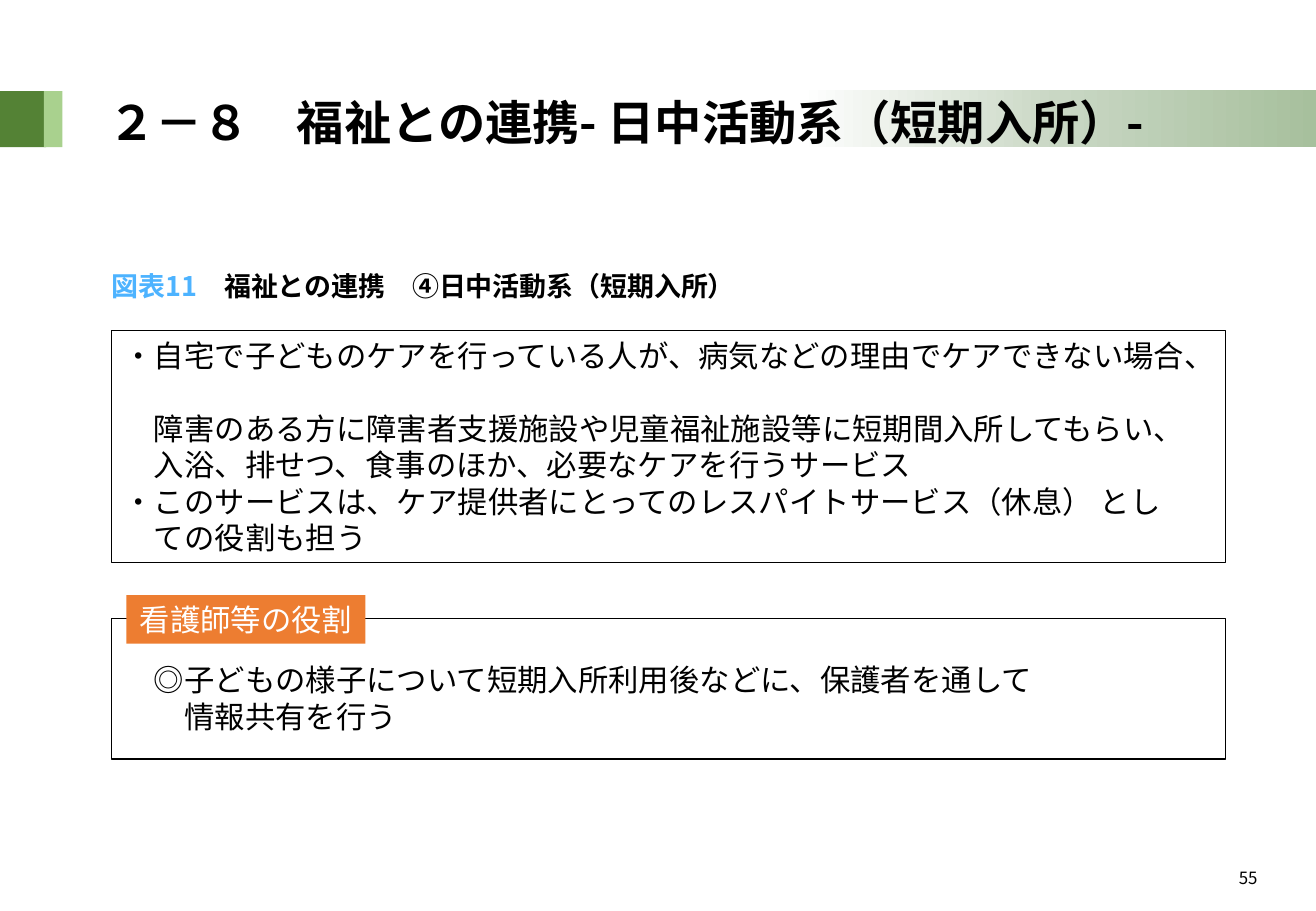
"""Build the slide on short-stay welfare services."""
from copy import deepcopy

from lxml import etree
from pptx import Presentation
from pptx.dml.color import RGBColor
from pptx.enum.shapes import MSO_SHAPE
from pptx.enum.text import MSO_ANCHOR, MSO_AUTO_SIZE, PP_ALIGN
from pptx.oxml.ns import qn
from pptx.util import Pt

RECT = MSO_SHAPE.RECTANGLE
LEFT, CENTER = PP_ALIGN.LEFT, PP_ALIGN.CENTER
TOP, MIDDLE = MSO_ANCHOR.TOP, MSO_ANCHOR.MIDDLE
FIXED = MSO_AUTO_SIZE.NONE

BLACK = RGBColor(0, 0, 0)
WHITE = RGBColor(255, 255, 255)
GREEN = RGBColor(0x54, 0x82, 0x35)
LIME = RGBColor(0xA9, 0xD1, 0x8E)
ORANGE = RGBColor(0xED, 0x7D, 0x31)
BLUE = RGBColor(0x4D, 0xB3, 0xFF)
FADE = [(0, RGBColor(0xA7, 0xC0, 0x9D)), (0.5, RGBColor(0xC9, 0xD7, 0xC4)), (1, WHITE)]
FONT = "Noto Sans CJK JP"

TITLE = "２－８　福祉との連携- 日中活動系（短期入所）-"
CAPTION = [("図表11　", BLUE), ("福祉との連携　④日中活動系（短期入所）", BLACK)]
SERVICE = [
    ("・自宅で子どものケアを行っている人が、病気などの理由でケアできない場合、", 0, 21.6),
    ("障害のある方に障害者支援施設や児童福祉施設等に短期間入所してもらい、", 1, 0),
    ("入浴、排せつ、食事のほか、必要なケアを行うサービス", 1, 0),
    ("・このサービスは、ケア提供者にとってのレスパイトサービス（休息） とし", 0, 0),
    ("ての役割も担う", 1, 0),
]
ROLE = [
    ("◎子どもの様子について短期入所利用後などに、保護者を通して", 1, 0),
    ("情報共有を行う", 2, 0),
]
LABEL = "看護師等の役割"
PAGE = "55"

EDGE, WIDE = 66.2, 660.2
BAND, TALL = 54, 33.2


def write(shape, text, size=18, color=BLACK, bold=False, align=LEFT, anchor=MIDDLE,
          inset=(7.2, 3.6, 7.2, 3.6), wrap=True, pitch=None):
    """Fill a shape with a string, or with (text, indent steps, space after) lines."""
    frame = shape.text_frame
    frame.auto_size, frame.word_wrap, frame.vertical_anchor = FIXED, wrap, anchor
    (frame.margin_left, frame.margin_top,
     frame.margin_right, frame.margin_bottom) = map(Pt, inset)
    lines = [(text, 0, 0)] if isinstance(text, str) else text
    for i, (line, step, after) in enumerate(lines):
        para = frame.add_paragraph() if i else frame.paragraphs[0]
        para.alignment, para.space_after = align, Pt(after)
        if pitch:
            para.line_spacing = pitch
        if step:
            para._p.get_or_add_pPr().set("marL", str(Pt(size * step)))
        for part, tint in ([(line, color)] if isinstance(line, str) else line):
            run = para.add_run()
            run.text = part
            font = run.font
            font.size, font.bold, font.name = Pt(size), bold, FONT
            font.color.rgb = tint
            east = etree.SubElement(run._r.get_or_add_rPr(), qn("a:ea"))
            east.set("typeface", FONT)


def box(slide, place, fill=None, line=None):
    """Add a flat rectangle."""
    shape = slide.shapes.add_shape(RECT, *map(Pt, place))
    shape.shadow.inherit = False
    if fill is None:
        shape.fill.background()
    else:
        shape.fill.solid()
        shape.fill.fore_color.rgb = fill
    if line is None:
        shape.line.fill.background()
    else:
        shape.line.color.rgb = line
        shape.line.width = Pt(0.75)
    return shape


def fade(shape, stops):
    """Give a shape a three-stop gradient from right to left."""
    shape.fill.gradient()
    shape.fill.gradient_angle = 180
    first = shape._element.spPr.find(".//" + qn("a:gs"))
    first.addnext(deepcopy(first))
    for stop, (place, color) in zip(shape.fill.gradient_stops, stops):
        stop.position = place
        stop.color.rgb = color


def main():
    """Lay out and save the slide."""
    deck = Presentation()
    deck.slide_width, deck.slide_height = Pt(780), Pt(540)
    slide = deck.slides.add_slide(deck.slide_layouts[5])
    title = slide.shapes.title

    box(slide, (0, BAND, 27.4, TALL), fill=GREEN)
    box(slide, (26, BAND, 11, TALL), fill=LIME)
    fade(box(slide, (474, BAND - 0.5, 306, TALL + 0.5)), FADE)

    title.left, title.top, title.width, title.height = map(Pt, (57, 51.2, 672.5, 46))
    write(title, TITLE, size=28, bold=True, pitch=0.9)
    slide.shapes._spTree.append(title._element)

    write(box(slide, (EDGE, 195.8, WIDE, 137.5), line=BLACK), SERVICE)
    write(box(slide, (EDGE, 366.5, WIDE, 83.5), line=BLACK), ROLE,
          inset=(7.2, 25.2, 7.2, 14.4))
    write(box(slide, (74.9, 352.8, 141.8, 28.8), fill=ORANGE), LABEL,
          color=WHITE, align=CENTER, wrap=False)

    caption = slide.shapes.add_textbox(*map(Pt, (EDGE, 156.2, 391.7, 26.6)))
    write(caption, [(CAPTION, 0, 0)], size=16, bold=True, anchor=TOP,
          inset=(0, 3.6, 7.2, 3.6), wrap=False)
    page = slide.shapes.add_textbox(*map(Pt, (727.2, 510.5, 27.4, 19.4)))
    write(page, PAGE, size=10, anchor=TOP, wrap=False)

    deck.save("out.pptx")


if __name__ == "__main__":
    main()
